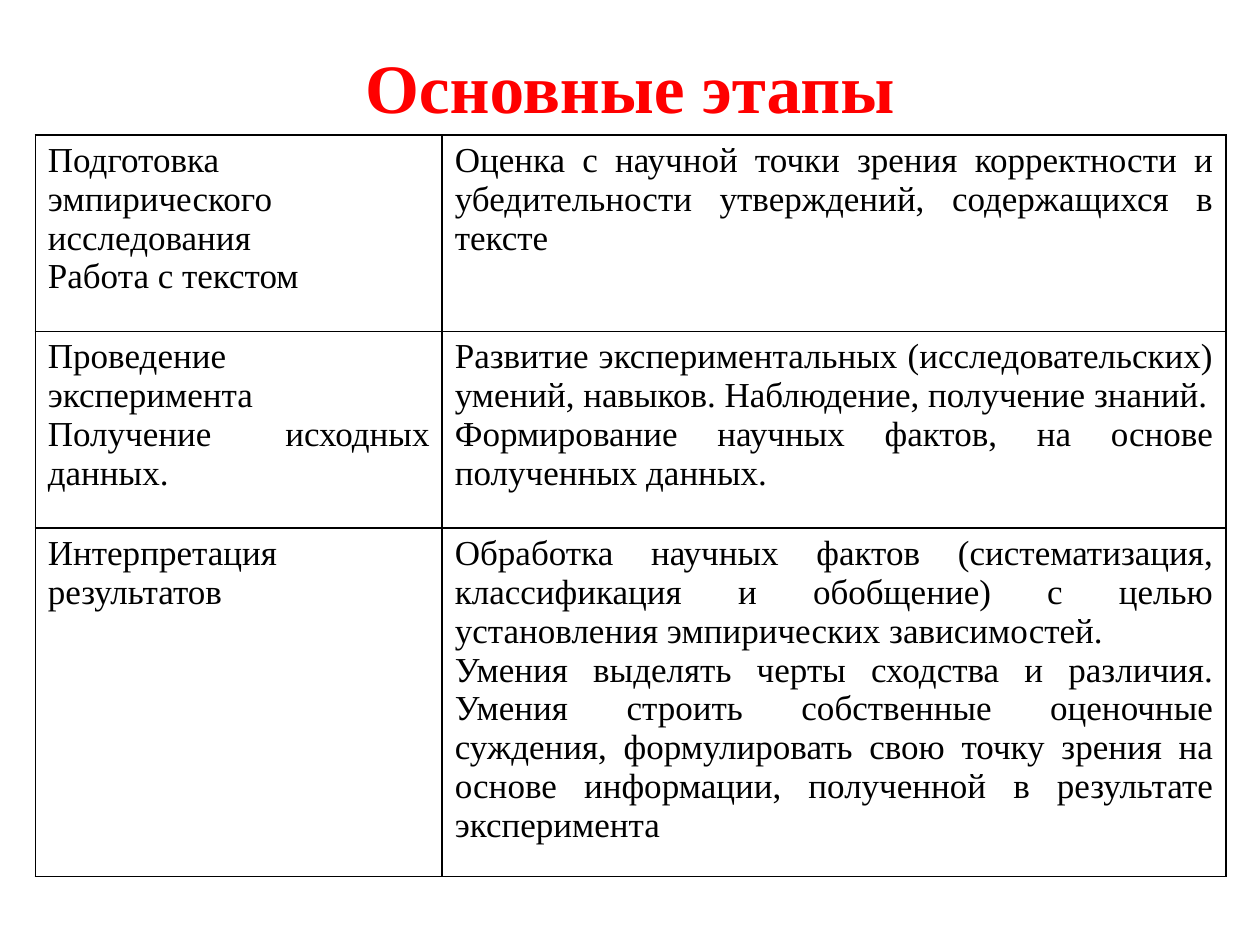
from lxml.etree import SubElement
from pptx import Presentation
from pptx.dml.color import RGBColor
from pptx.enum.text import MSO_ANCHOR as Anchor, PP_ALIGN as Align
from pptx.oxml.ns import qn
from pptx.util import Pt

FONT = "Times New Roman"
COLS = [232.56, 447.84]
ROWS = [112.32, 112.32, 183.6]
STAGES = [
    (["Подготовка эмпирического исследования", "Работа с текстом"],
     ["Оценка с научной точки зрения корректности и убедительности утверждений, содержащихся в тексте"]),
    (["Проведение эксперимента", "Получение исходных данных."],
     ["Развитие экспериментальных (исследовательских) умений, навыков. Наблюдение, получение знаний.",
      "Формирование научных фактов, на основе полученных данных."]),
    (["Интерпретация результатов"],
     ["Обработка научных фактов (систематизация, классификация и обобщение) с целью "
      "установления эмпирических зависимостей.",
      "Умения выделять черты сходства и различия. Умения строить собственные оценочные "
      "суждения, формулировать свою точку зрения на основе информации, полученной в "
      "результате эксперимента"]),
]


def set_color(target, color):
    """Apply a hex colour to a font's colour format."""
    target.rgb = RGBColor.from_string(color)


def write_text(tf, lines, align, color, **font):
    """Fill a text frame with one formatted paragraph per line."""
    for i, line in enumerate(lines):
        p = tf.paragraphs[0] if i == 0 else tf.add_paragraph()
        p.alignment = align
        r = p.add_run()
        r.text = line
        for name, value in {"name": FONT, **font}.items():
            setattr(r.font, name, value)
        set_color(r.font.color, color)


def add_title(slide, text):
    """Add the centred slide heading."""
    tf = slide.shapes.add_textbox(Pt(36), Pt(21.6), Pt(648), Pt(55.44)).text_frame
    tf.word_wrap = True
    tf.vertical_anchor = Anchor.MIDDLE
    write_text(tf, [text], Align.CENTER, "FF0000", size=Pt(39.6), bold=True)


def set_borders(cell, color, width):
    """Draw a solid line on all four sides of a cell."""
    pr = cell._tc.get_or_add_tcPr()
    for i, side in enumerate(("lnL", "lnR", "lnT", "lnB")):
        ln = pr.makeelement(qn(f"a:{side}"), {"w": str(Pt(width))})
        fill = SubElement(ln, qn("a:solidFill"))
        SubElement(fill, qn("a:srgbClr"), val=color)
        pr.insert(i, ln)


def add_stage_table(slide):
    """Add the bordered table of stages and their content."""
    table = slide.shapes.add_table(
        len(ROWS), len(COLS), Pt(20.16), Pt(77.04), Pt(sum(COLS)), Pt(sum(ROWS))).table
    table.first_row = table.horz_banding = False
    for column, width in zip(table.columns, COLS):
        column.width = Pt(width)
    for row, height, texts in zip(table.rows, ROWS, STAGES):
        row.height = Pt(height)
        for cell, lines in zip(row.cells, texts):
            cell.fill.background()
            set_borders(cell, "000000", 1)
            write_text(cell.text_frame, lines, Align.JUSTIFY, "000000", size=Pt(20))


def main():
    """Build and save the slide."""
    prs = Presentation()
    prs.slide_width, prs.slide_height = Pt(720), Pt(540)
    slide = prs.slides.add_slide(prs.slide_layouts[6])
    add_title(slide, "Основные этапы")
    add_stage_table(slide)
    prs.save("out.pptx")


if __name__ == "__main__":
    main()
